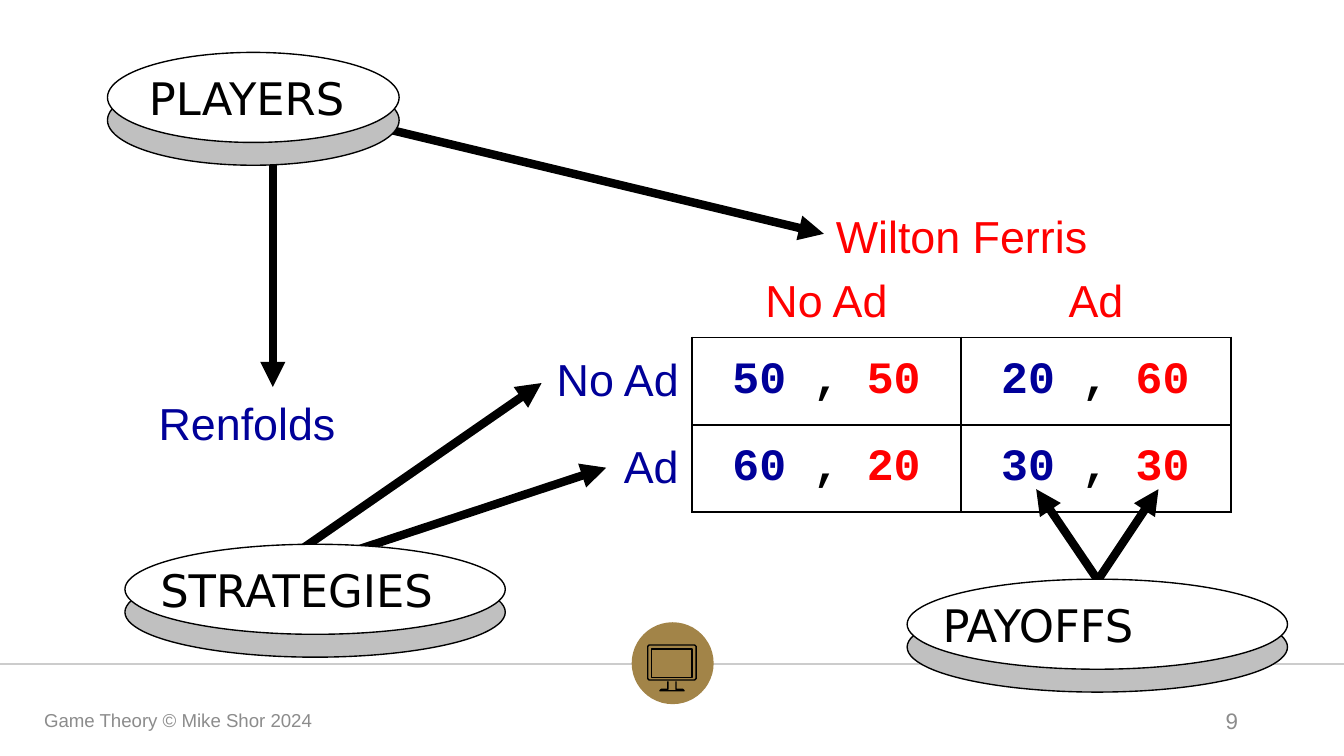
"""Build the advertising game slide: players, strategies and payoffs around a payoff table."""
from dataclasses import dataclass

from lxml import etree
from pptx import Presentation
from pptx.dml.color import RGBColor
from pptx.enum.shapes import MSO_CONNECTOR, MSO_SHAPE
from pptx.enum.text import MSO_ANCHOR, MSO_AUTO_SIZE, PP_ALIGN
from pptx.oxml.ns import qn
from pptx.util import Inches, Pt

STRAIGHT = MSO_CONNECTOR.STRAIGHT
OVAL = MSO_SHAPE.OVAL
TOP, MIDDLE, BOTTOM = MSO_ANCHOR.TOP, MSO_ANCHOR.MIDDLE, MSO_ANCHOR.BOTTOM
LEFT, CENTER, RIGHT = PP_ALIGN.LEFT, PP_ALIGN.CENTER, PP_ALIGN.RIGHT
GROW = MSO_AUTO_SIZE.SHAPE_TO_FIT_TEXT


@dataclass(frozen=True)
class Theme:
    black: RGBColor = RGBColor.from_string("000000")
    white: RGBColor = RGBColor.from_string("FFFFFF")
    shade: RGBColor = RGBColor.from_string("C0C0C0")
    rule: RGBColor = RGBColor.from_string("CCCCCC")
    gold: RGBColor = RGBColor.from_string("A28448")
    muted: RGBColor = RGBColor.from_string("8C8C8C")
    row_player: RGBColor = RGBColor.from_string("000099")
    column_player: RGBColor = RGBColor.from_string("FF0000")
    sans: str = "Arial"
    mono: str = "Courier New"
    title: str = "DejaVu Sans"
    body: Pt = Pt(24)
    footer: Pt = Pt(10)
    number: Pt = Pt(12)
    thin: Pt = Pt(0.75)
    border: Pt = Pt(1)
    thick: Pt = Pt(4.5)


theme = Theme()


def write(para, spans, size, font, align=LEFT, bold=False):
    para.alignment = align
    for text, color in spans:
        span = para.add_run()
        span.text = text
        span.font.size, span.font.name, span.font.bold = size, font, bold
        span.font.color.rgb = color


def connect(start, end, color, width, arrow=True):
    line = page.shapes.add_connector(STRAIGHT, *map(Inches, start + end))
    line.line.color.rgb = color
    line.line.width = width
    if arrow:
        etree.SubElement(line.line._get_or_add_ln(), qn("a:tailEnd"), type="triangle")
    etree.SubElement(line._element.spPr, qn("a:effectLst"))


deck = Presentation()
deck.slide_width, deck.slide_height = Inches(10), Inches(10 * 9 / 16)
page = deck.slides.add_slide(deck.slide_layouts[6])

connect((0, 4.94), (10, 4.94), theme.rule, theme.thin, arrow=False)
badge = page.shapes.add_shape(OVAL, Inches(4.7), Inches(4.63), Inches(0.61), Inches(0.61))
badge.shadow.inherit = False
badge.fill.solid()
badge.fill.fore_color.rgb = theme.gold
badge.line.fill.background()

stand = [(497, 507), (497, 513), (492, 513), (491, 514),
         (509, 514), (508, 513), (503, 513), (503, 507)]
frame = [(483, 480), (517, 480), (518, 481), (518, 505),
         (517, 506), (483, 506), (482, 505), (482, 481)]
display = [(485, 483), (515, 483), (515, 504), (485, 504)]
for outlines, closed in (([stand], False), ([frame, display], True)):
    builder = page.shapes.build_freeform(*outlines[0][0], scale=Inches(0.01))
    builder.add_line_segments(outlines[0][1:], close=closed)
    for outline in outlines[1:]:
        builder.move_to(*outline[0])
        builder.add_line_segments(outline[1:], close=closed)
    monitor = builder.convert_to_shape()
    monitor.shadow.inherit = False
    monitor.fill.background()
    monitor.line.color.rgb = theme.black
    monitor.line.width = theme.thin

arrows = [
    ((8.34, 4.57), (7.71, 3.64)),
    ((8, 4.57), (8.62, 3.64)),
    ((2.67, 0.91), (6.13, 1.74)),
    ((2.03, 1.15), (2.03, 2.88)),
    ((2.21, 4.11), (4.03, 2.85)),
    ((2.54, 4.13), (4.51, 3.48)),
]
for start, end in arrows:
    connect(start, end, theme.black, theme.thick)

discs = [
    ("PLAYERS", 0.8, 0.39, 2.17, 1.75),
    ("STRATEGIES", 0.93, 4.05, 2.83, 2.5),
    ("PAYOFFS", 6.75, 4.31, 2.83, 2.5),
]
for name, left, top, width, text_width in discs:
    for drop, color in ((0.17, theme.shade), (0, theme.white)):
        disc = page.shapes.add_shape(OVAL, Inches(left), Inches(top + drop), Inches(width), Inches(0.67))
        disc.shadow.inherit = False
        disc.fill.solid()
        disc.fill.fore_color.rgb = color
        disc.line.color.rgb = theme.black
        disc.line.width = theme.thin
    inset = (width - text_width) / 2
    box = page.shapes.add_textbox(Inches(left + inset), Inches(top + 0.09), Inches(text_width), Inches(0.5))
    box.text_frame.word_wrap = True
    box.text_frame.auto_size = GROW
    write(box.text_frame.paragraphs[0], [(name, theme.black)], theme.body, theme.title)

columns, rows = [2.81, 1.72, 2, 2.01], [0.63, 0.5, 0.65, 0.65]
game = page.shapes.add_table(len(rows), len(columns), Inches(0.62), Inches(1.38),
                             Inches(sum(columns)), Inches(sum(rows))).table
game.first_row = game.horz_banding = False
for column, width in zip(game.columns, columns):
    column.width = Inches(width)
for row, height in zip(game.rows, rows):
    row.height = Inches(height)

for r in range(len(rows)):
    for c in range(len(columns)):
        cell = game.cell(r, c)
        cell.fill.background()
        edges = ""
        if r >= 2 and c >= 2:
            edges = "LRTB"
        elif r == 1 and c >= 2:
            edges = "B"
        elif r >= 2 and c == 1:
            edges = "R"
        properties = cell._tc.get_or_add_tcPr()
        for position, side in enumerate("LRTB"):
            edge = etree.Element(qn(f"a:ln{side}"), w=str(theme.border))
            if side in edges:
                paint = etree.SubElement(edge, qn("a:solidFill"))
                etree.SubElement(paint, qn("a:srgbClr"), val=str(theme.black))
            else:
                etree.SubElement(edge, qn("a:noFill"))
            properties.insert(position, edge)

game.cell(0, 2).merge(game.cell(0, 3))
game.cell(2, 0).merge(game.cell(3, 0))
labels = [
    (0, 2, "Wilton Ferris", theme.column_player, CENTER, BOTTOM),
    (1, 2, "No Ad", theme.column_player, CENTER, TOP),
    (1, 3, "Ad", theme.column_player, CENTER, TOP),
    (2, 0, "Renfolds", theme.row_player, LEFT, MIDDLE),
    (2, 1, "No Ad", theme.row_player, RIGHT, MIDDLE),
    (3, 1, "Ad", theme.row_player, RIGHT, MIDDLE),
]
for r, c, text, color, align, anchor in labels:
    cell = game.cell(r, c)
    cell.vertical_anchor = anchor
    write(cell.text_frame.paragraphs[0], [(text, color)], theme.body, theme.sans, align)
game.cell(2, 0).margin_left = Inches(0.56)

payoffs = [[("50", "50"), ("20", "60")], [("60", "20"), ("30", "30")]]
for r, pairs in enumerate(payoffs, start=2):
    for c, (own, other) in enumerate(pairs, start=2):
        cell = game.cell(r, c)
        cell.vertical_anchor = MIDDLE
        spans = [(" ", theme.black), (own, theme.row_player),
                 (" , ", theme.black), (other, theme.column_player)]
        write(cell.text_frame.paragraphs[0], spans, theme.body, theme.mono, bold=True)

footers = [
    ("Game Theory © Mike Shor 2024", 0.23, 3.38, theme.footer, LEFT),
    ("9", 7.06, 2.25, theme.number, RIGHT),
]
for text, left, width, size, align in footers:
    box = page.shapes.add_textbox(Inches(left), Inches(5.21), Inches(width), Inches(0.3))
    box.text_frame.word_wrap = True
    box.text_frame.vertical_anchor = MIDDLE
    write(box.text_frame.paragraphs[0], [(text, theme.muted)], size, theme.sans, align)

deck.save("out.pptx")
